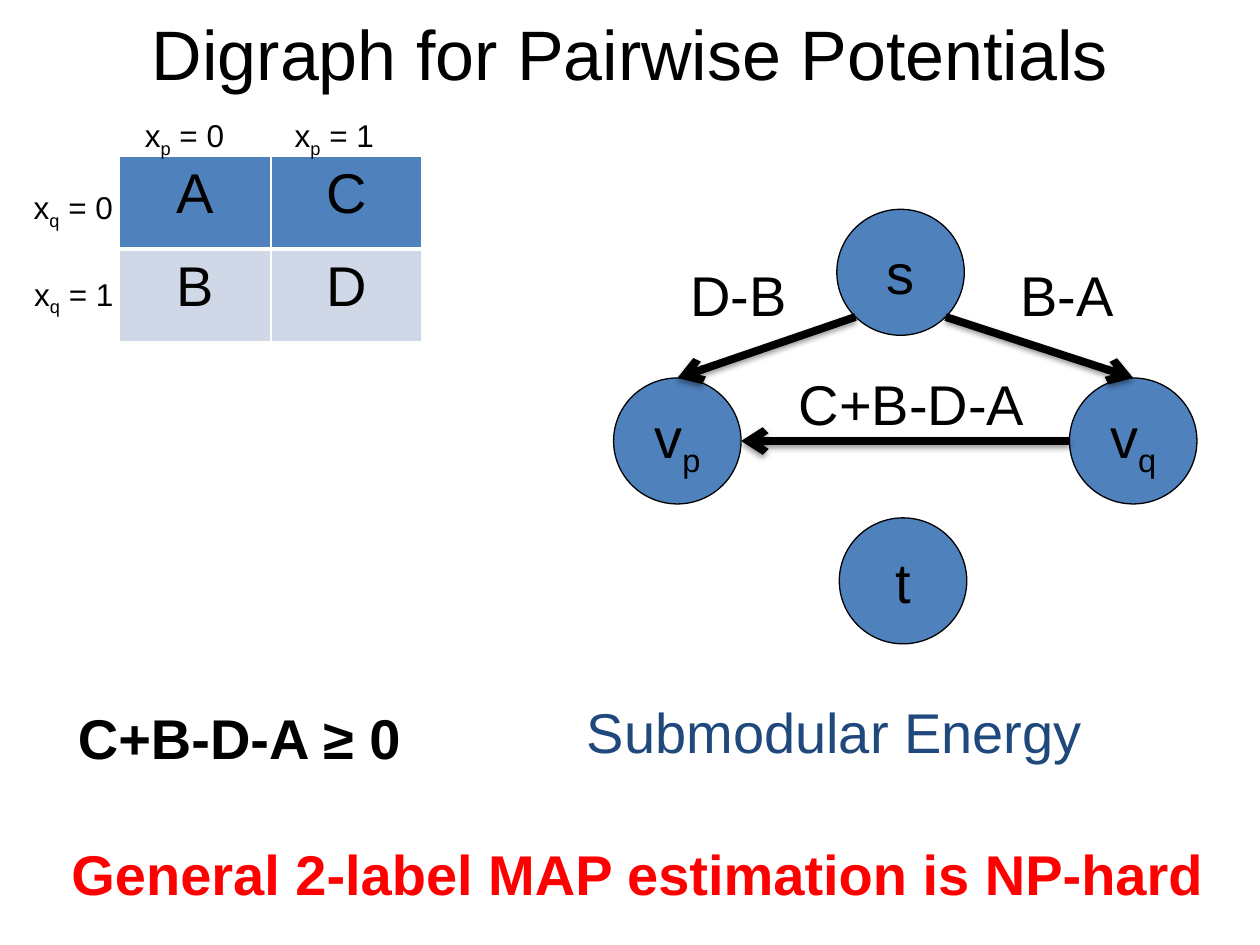
from pptx import Presentation
from pptx.dml.color import RGBColor
from pptx.enum.shapes import MSO_CONNECTOR, MSO_SHAPE
from pptx.enum.text import MSO_ANCHOR, MSO_AUTO_SIZE, PP_ALIGN
from pptx.oxml import parse_xml
from pptx.util import Cm, Pt

BLACK = RGBColor(0x00, 0x00, 0x00)
WHITE = RGBColor(0xFF, 0xFF, 0xFF)
RED = RGBColor(0xFF, 0x00, 0x00)
NAVY = RGBColor(0x1F, 0x49, 0x7D)
BLUE = RGBColor(0x4F, 0x81, 0xBD)
PALE = RGBColor(0xD0, 0xD8, 0xE8)
CENTER, LEFT = PP_ALIGN.CENTER, PP_ALIGN.LEFT
MIDDLE = MSO_ANCHOR.MIDDLE
FIT, FIXED = MSO_AUTO_SIZE.SHAPE_TO_FIT_TEXT, MSO_AUTO_SIZE.NONE
OVAL, STRAIGHT = MSO_SHAPE.OVAL, MSO_CONNECTOR.STRAIGHT
NS = 'xmlns:a="http://schemas.openxmlformats.org/drawingml/2006/main"'
FONT = "Arial"

# Content: lengths in cm; an underscore marks the letter after it as subscript
TITLE = "Digraph for Pairwise Potentials"
NODE_W, NODE_H = 2.57, 2.54
NODES = {  # name: left, top
    "v_p": (12.37, 7.62),
    "v_q": (21.56, 7.62),
    "s": (16.87, 4.22),
    "t": (16.92, 10.44),
}
ANCHORS = {  # share of the node's width and height
    "top": (0.5, 0),
    "left": (0, 0.5),
    "right": (1, 0.5),
    "lower left": (0.146, 0.854),
    "lower right": (0.854, 0.854),
}
EDGES = [
    ("s", "lower right", "v_q", "top"),
    ("s", "lower left", "v_p", "top"),
    ("v_q", "left", "v_p", "right"),
]
LABELS = [  # text, left, top, width, size, colour, bold
    ("B-A", 20.32, 5.13, 2.39, 32, BLACK, False),
    ("D-B", 13.67, 5.13, 2.46, 32, BLACK, False),
    ("C+B-D-A", 15.85, 7.32, 5.16, 32, BLACK, False),
    ("C+B-D-A ≥ 0", 1.32, 14.05, 7.04, 32, BLACK, True),
    ("General 2-label MAP estimation is NP-hard", 1.19, 16.79, 23.5, 32, RED, True),
    ("Submodular Energy", 11.58, 13.94, 10.59, 32, NAVY, False),
    ("x_p = 0", 2.67, 2.21, 2.16, 18, BLACK, False),
    ("x_p = 1", 5.69, 2.21, 2.16, 18, BLACK, False),
    ("x_q = 0", 0.43, 3.66, 2.16, 18, BLACK, False),
    ("x_q = 1", 0.44, 5.41, 2.16, 18, BLACK, False),
]
POTENTIALS = [("A", "C"), ("B", "D")]
ROW_FILLS = [BLUE, PALE]
TABLE_LEFT, TABLE_TOP, COLUMN_W, ROW_H = 2.41, 3.15, 3.05, 1.87


def add_text(frame, text, size, color=BLACK, bold=False, align=LEFT):
    para = frame.paragraphs[0]
    para.alignment = align
    base, mark, rest = text.partition("_")
    for part, lowered in ((base, False), (rest[:1], True), (rest[1:], False)):
        if part:
            span = para.add_run()
            span.text = part
            span.font.name, span.font.size = FONT, Pt(size)
            span.font.bold = bold
            span.font.color.rgb = color
            if lowered:
                span.font._element.set("baseline", "-25000")


def add_node(page, name, left, top):
    node = page.shapes.add_shape(OVAL, Cm(left), Cm(top), Cm(NODE_W), Cm(NODE_H))
    node.shadow.inherit = False
    node.fill.solid()
    node.fill.fore_color.rgb = BLUE
    node.line.color.rgb = BLACK
    node.line.width = Pt(0.75)
    node.text_frame.word_wrap = False
    node.text_frame.vertical_anchor = MIDDLE
    add_text(node.text_frame, name, 32, align=CENTER)


def anchor_point(name, anchor):
    (left, top), (across, down) = NODES[name], ANCHORS[anchor]
    return Cm(left + across * NODE_W), Cm(top + down * NODE_H)


def add_edge(page, source, source_anchor, target, target_anchor):
    start, end = anchor_point(source, source_anchor), anchor_point(target, target_anchor)
    edge = page.shapes.add_connector(STRAIGHT, *start, *end)
    edge.line.color.rgb = BLACK
    edge.line.width = Pt(4.5)
    edge.line._get_or_add_ln().append(parse_xml(f'<a:tailEnd {NS} type="arrow"/>'))
    edge._element.spPr.append(parse_xml(
        f'<a:effectLst {NS}><a:outerShdw blurRad="40000" dist="20000" dir="5400000" '
        'rotWithShape="0"><a:srgbClr val="000000"><a:alpha val="38000"/></a:srgbClr>'
        '</a:outerShdw></a:effectLst>'))


def add_label(page, text, left, top, width, size, color, bold):
    height = 1.63 if size == 32 else 1.02
    box = page.shapes.add_textbox(Cm(left), Cm(top), Cm(width), Cm(height))
    box.text_frame.word_wrap = False
    box.text_frame.auto_size = FIT
    add_text(box.text_frame, text, size, color, bold)


def set_borders(cell, widths):
    for side, width in widths.items():
        cell._tc.get_or_add_tcPr().append(parse_xml(
            f'<a:ln{side} {NS} w="{Pt(width)}"><a:solidFill><a:srgbClr val="{WHITE}"/>'
            f'</a:solidFill></a:ln{side}>'))


def add_potentials(page):
    rows, columns = len(POTENTIALS), len(POTENTIALS[0])
    table = page.shapes.add_table(rows, columns, Cm(TABLE_LEFT), Cm(TABLE_TOP),
                                  Cm(columns * COLUMN_W), Cm(rows * ROW_H)).table
    for column in table.columns:
        column.width = Cm(COLUMN_W)
    for r, letters in enumerate(POTENTIALS):
        table.rows[r].height = Cm(ROW_H)
        for c, letter in enumerate(letters):
            cell = table.cell(r, c)
            # The rule under the header row is thicker
            set_borders(cell, {"L": 1, "R": 1, "T": 3 if r else 1, "B": 1 if r else 3})
            cell.fill.solid()
            cell.fill.fore_color.rgb = ROW_FILLS[r]
            add_text(cell.text_frame, letter, 32, align=CENTER)


def main():
    deck = Presentation()
    deck.slide_width, deck.slide_height = Cm(25.4), Cm(19.05)
    page = deck.slides.add_slide(deck.slide_layouts[6])

    # Title
    box = page.shapes.add_textbox(Cm(1.27), Cm(0.15), Cm(22.86), Cm(1.8))
    box.text_frame.word_wrap = True
    box.text_frame.auto_size = FIXED
    box.text_frame.vertical_anchor = MIDDLE
    add_text(box.text_frame, TITLE, 40, align=CENTER)

    # Graph, table and labels
    for name, place in NODES.items():
        add_node(page, name, *place)
    for edge in EDGES:
        add_edge(page, *edge)
    add_potentials(page)
    for label in LABELS:
        add_label(page, *label)

    deck.save("out.pptx")


if __name__ == "__main__":
    main()
